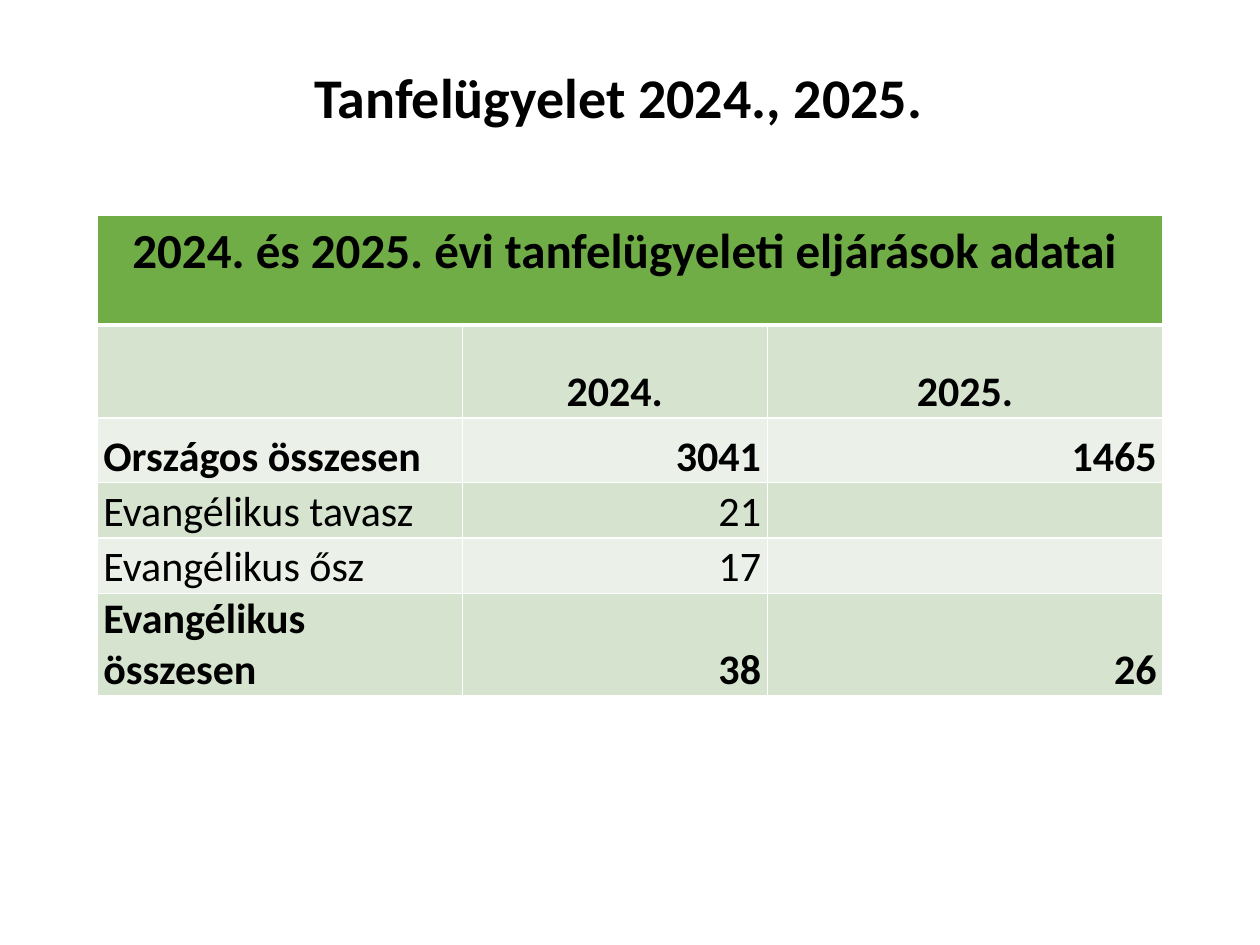
from lxml.etree import SubElement
from pptx import Presentation
from pptx.dml.color import RGBColor
from pptx.enum.text import MSO_ANCHOR, PP_ALIGN
from pptx.oxml.ns import qn
from pptx.util import Inches, Pt


def add_run(paragraph, text, size, bold):
    run = paragraph.add_run()
    run.text = text
    run.font.name = "Calibri"
    run.font.size = Pt(size)
    run.font.bold = bold
    run.font.color.rgb = RGBColor.from_string("000000")


def style_cell(cell, fill, bottom_width=1, top_width=1):
    """Give the cell white borders and a solid fill."""
    properties = cell._tc.get_or_add_tcPr()
    widths = {"a:lnL": 1, "a:lnR": 1, "a:lnT": top_width, "a:lnB": bottom_width}
    for tag, width in widths.items():
        line = SubElement(properties, qn(tag), w=str(Pt(width)))
        line_fill = SubElement(line, qn("a:solidFill"))
        SubElement(line_fill, qn("a:srgbClr"), val="FFFFFF")
    cell.fill.solid()
    cell.fill.fore_color.rgb = RGBColor.from_string(fill)


presentation = Presentation()
presentation.slide_width = Inches(10)
presentation.slide_height = Inches(7.5)
slide = presentation.slides.add_slide(presentation.slide_layouts[5])

title = slide.shapes.title
title.left, title.top = Inches(0.6), Inches(0.43)
title.width, title.height = Inches(8.62), Inches(0.74)
title.text_frame.vertical_anchor = MSO_ANCHOR.MIDDLE
title_paragraph = title.text_frame.paragraphs[0]
title_paragraph.alignment = PP_ALIGN.CENTER
title_paragraph.line_spacing = 0.9
add_run(title_paragraph, "Tanfelügyelet 2024., 2025.", 32, True)

column_widths = [2.9, 2.42, 3.14]
row_heights = [0.87, 0.74, 0.51, 0.44, 0.44, 0.8]
body_rows = [
    (["", "2024.", "2025."], True),
    (["Országos összesen", "3041", "1465"], True),
    (["Evangélikus tavasz", "21", ""], False),
    (["Evangélikus ősz", "17", ""], False),
    (["Evangélikus összesen", "38", "26"], True),
]

table = slide.shapes.add_table(
    len(row_heights), len(column_widths), Inches(0.77), Inches(1.71),
    Inches(sum(column_widths)), Inches(sum(row_heights))).table
for column, width in zip(table.columns, column_widths):
    column.width = Inches(width)
for row, height in zip(table.rows, row_heights):
    row.height = Inches(height)

for cell in table.rows[0].cells:
    style_cell(cell, "70AD47", bottom_width=3)
header = table.cell(0, 0)
header.merge(table.cell(0, 2))
header_paragraph = header.text_frame.paragraphs[0]
header_paragraph.alignment = PP_ALIGN.CENTER
add_run(header_paragraph, "2024. és 2025. évi tanfelügyeleti eljárások adatai ", 28, True)

for row_index, (texts, bold) in enumerate(body_rows, start=1):
    for column_index, text in enumerate(texts):
        cell = table.cell(row_index, column_index)
        style_cell(cell, "D5E3CF" if row_index % 2 else "EBF1E9",
                   top_width=3 if row_index == 1 else 1)
        if not text:
            continue
        cell.vertical_anchor = MSO_ANCHOR.BOTTOM
        cell.margin_left = cell.margin_right = Inches(0.05)
        cell.margin_top = cell.margin_bottom = 0
        paragraph = cell.text_frame.paragraphs[0]
        if row_index == 1:
            paragraph.alignment = PP_ALIGN.CENTER
        elif column_index > 0:
            paragraph.alignment = PP_ALIGN.RIGHT
        else:
            paragraph.alignment = PP_ALIGN.LEFT
        add_run(paragraph, text, 24, bold)

presentation.save("out.pptx")
